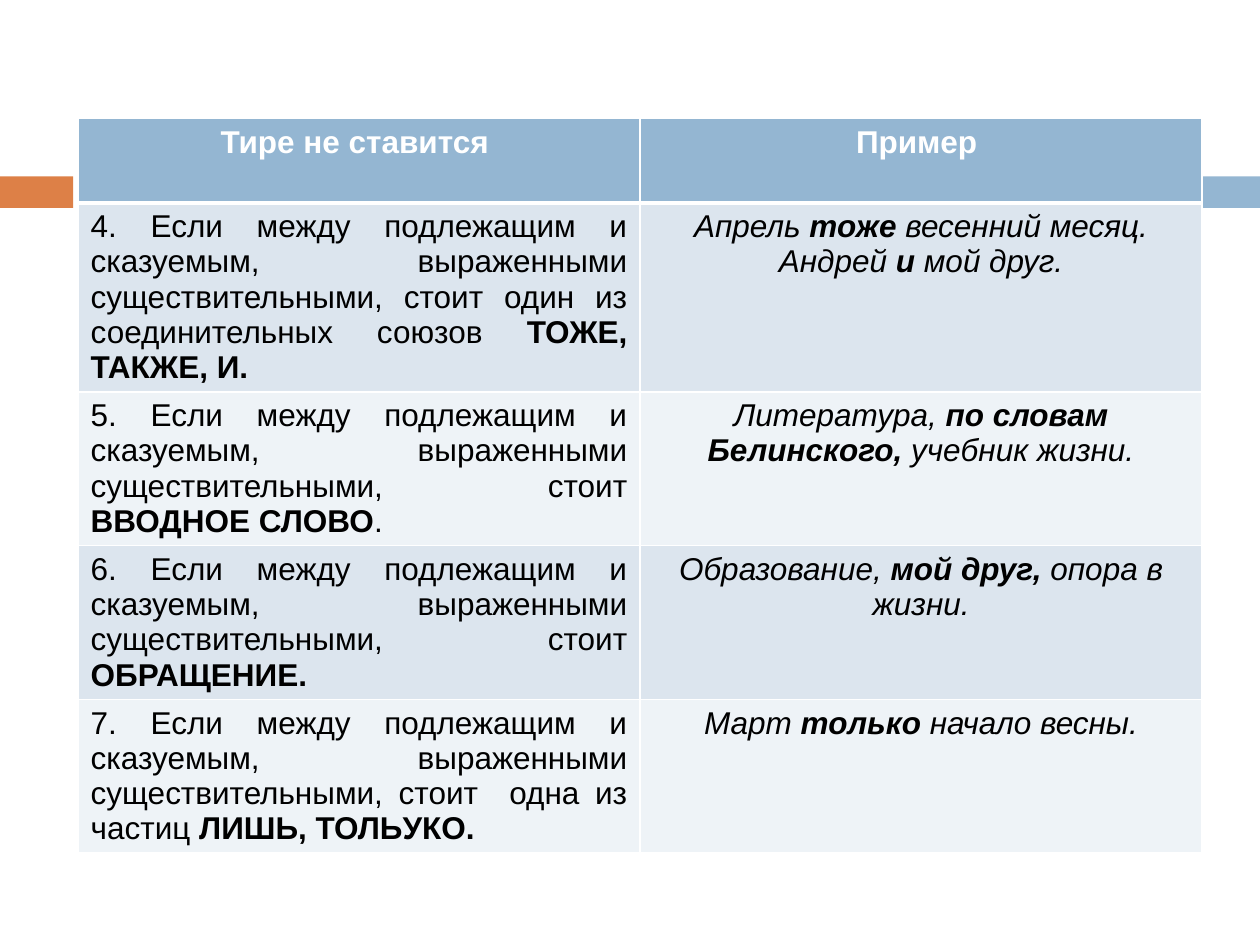
from dataclasses import dataclass

from lxml import etree
from pptx import Presentation
from pptx.dml.color import RGBColor
from pptx.enum import shapes, text
from pptx.oxml import ns
from pptx.util import Inches, Pt

WHITE = RGBColor(0xFF, 0xFF, 0xFF)
BLACK = RGBColor(0x00, 0x00, 0x00)
ORANGE = RGBColor(0xDD, 0x80, 0x47)
BLUE = RGBColor(0x94, 0xB6, 0xD2)
BANDS = (RGBColor(0xDC, 0xE5, 0xEE), RGBColor(0xEE, 0xF3, 0xF7))

PAGE_WIDTH, PAGE_HEIGHT = 10, 7.5
TABLE_LEFT, TABLE_TOP, COLUMN_WIDTH = 0.62, 0.94, 4.46
HEADER_HEIGHT = 0.67
HEADERS = ("Тире не ставится ", "Пример ")
RULE_START = "Если между подлежащим и сказуемым, выраженными существительными, стоит"
BOLD_MARK = "*"  # toggles bold inside a text


@dataclass
class Strip:
    left: float
    width: float
    color: RGBColor


@dataclass
class Rule:
    height: float
    number: int
    ending: str
    examples: tuple[str, ...]


STRIPS = (Strip(0, 0.58, ORANGE), Strip(0.65, PAGE_WIDTH - 0.65, BLUE))
RULES = (
    Rule(1.45, 4, "один из соединительных союзов *ТОЖЕ, ТАКЖЕ, И.",
         ("Апрель *тоже* весенний месяц.", "Андрей *и* мой друг.")),
    Rule(1.18, 5, "*ВВОДНОЕ СЛОВО*.",
         ("Литература, *по словам Белинского, *учебник жизни.",)),
    Rule(0.91, 6, "*ОБРАЩЕНИЕ.",
         ("Образование, *мой друг,* опора в жизни.",)),
    Rule(1.18, 7, " одна из частиц *ЛИШЬ, ТОЛЬУКО.",
         ("Март *только* начало весны.",)),
)


def draw_strip(page, strip: Strip) -> None:
    box = page.shapes.add_shape(
        shapes.MSO_SHAPE.RECTANGLE, Inches(strip.left), Inches(1.4),
        Inches(strip.width), Inches(0.25))
    box.shadow.inherit = False
    box.fill.solid()
    box.fill.fore_color.rgb = strip.color
    box.line.fill.background()


def write_text(para, content: str, *, color=BLACK, bold=False, italic=False,
               align=text.PP_ALIGN.CENTER) -> None:
    para.alignment = align
    for index, part in enumerate(content.split(BOLD_MARK)):
        if not part:
            continue
        span = para.add_run()
        span.text = part
        span.font.name = "Arial"
        span.font.size = Pt(18)
        span.font.bold = bold or index % 2 == 1
        span.font.italic = italic
        span.font.color.rgb = color


def style_cell(cell, fill: RGBColor, *, top=1, bottom=1) -> None:
    properties = cell._tc.get_or_add_tcPr()
    for side, width in (("L", 1), ("R", 1), ("T", top), ("B", bottom)):
        border = etree.SubElement(properties, ns.qn(f"a:ln{side}"), w=str(Pt(width)))
        paint = etree.SubElement(border, ns.qn("a:solidFill"))
        etree.SubElement(paint, ns.qn("a:srgbClr"), val=str(WHITE))
    cell.fill.solid()
    cell.fill.fore_color.rgb = fill


def draw_table(page) -> None:
    heights = [HEADER_HEIGHT, *(rule.height for rule in RULES)]
    table = page.shapes.add_table(
        len(heights), len(HEADERS), Inches(TABLE_LEFT), Inches(TABLE_TOP),
        Inches(COLUMN_WIDTH * len(HEADERS)), Inches(sum(heights))).table
    for row, height in zip(table.rows, heights):
        row.height = Inches(height)

    # Header row
    for column, title in enumerate(HEADERS):
        cell = table.cell(0, column)
        style_cell(cell, BLUE, bottom=3)
        write_text(cell.text_frame.paragraphs[0], title, color=WHITE, bold=True)

    # Rules on the left, examples on the right
    for row, rule in enumerate(RULES, start=1):
        rule_cell, example_cell = table.cell(row, 0), table.cell(row, 1)
        for cell in (rule_cell, example_cell):
            style_cell(cell, BANDS[(row - 1) % 2], top=3 if row == 1 else 1)
        write_text(rule_cell.text_frame.paragraphs[0],
                   f"{rule.number}. {RULE_START} {rule.ending}",
                   align=text.PP_ALIGN.JUSTIFY)
        frame = example_cell.text_frame
        for index, example in enumerate(rule.examples):
            para = frame.add_paragraph() if index else frame.paragraphs[0]
            write_text(para, example, italic=True)


def main() -> None:
    deck = Presentation()
    deck.slide_width, deck.slide_height = Inches(PAGE_WIDTH), Inches(PAGE_HEIGHT)
    page = deck.slides.add_slide(deck.slide_layouts[6])
    for strip in STRIPS:
        draw_strip(page, strip)
    draw_table(page)
    deck.save("out.pptx")


if __name__ == "__main__":
    main()
